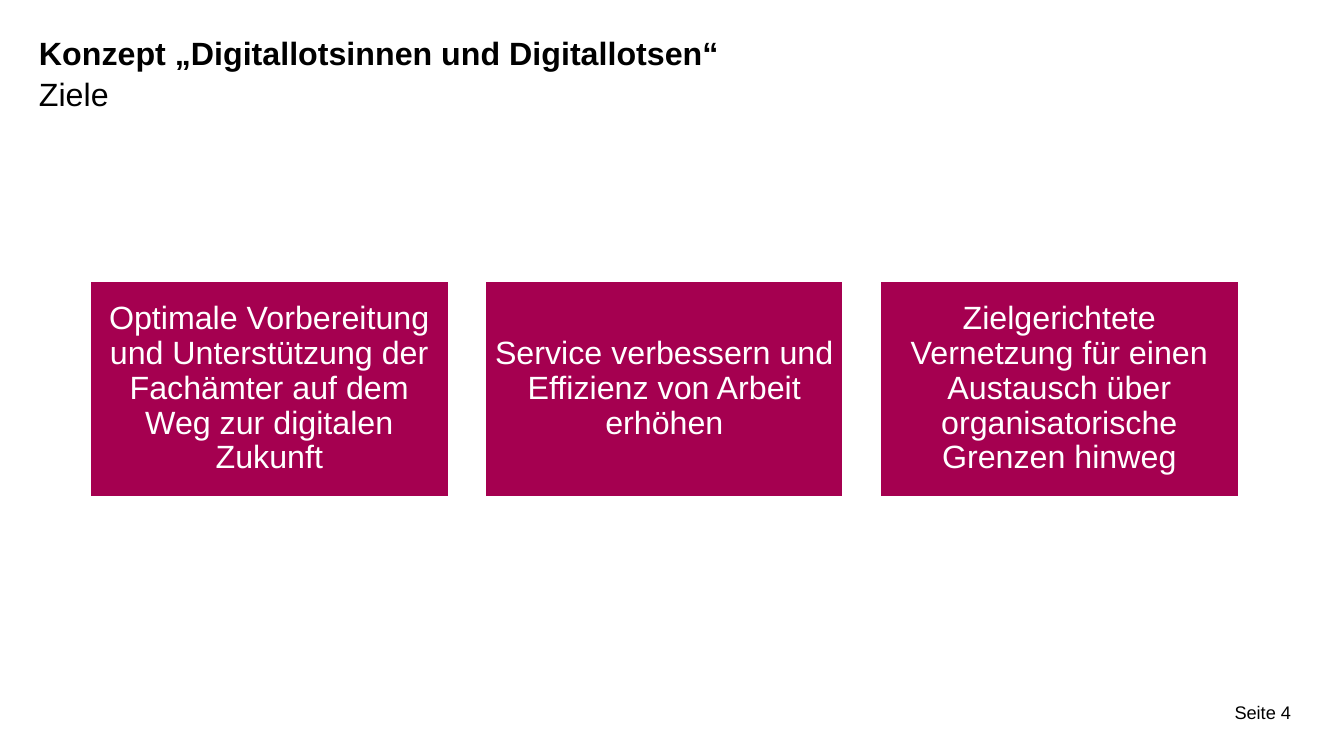
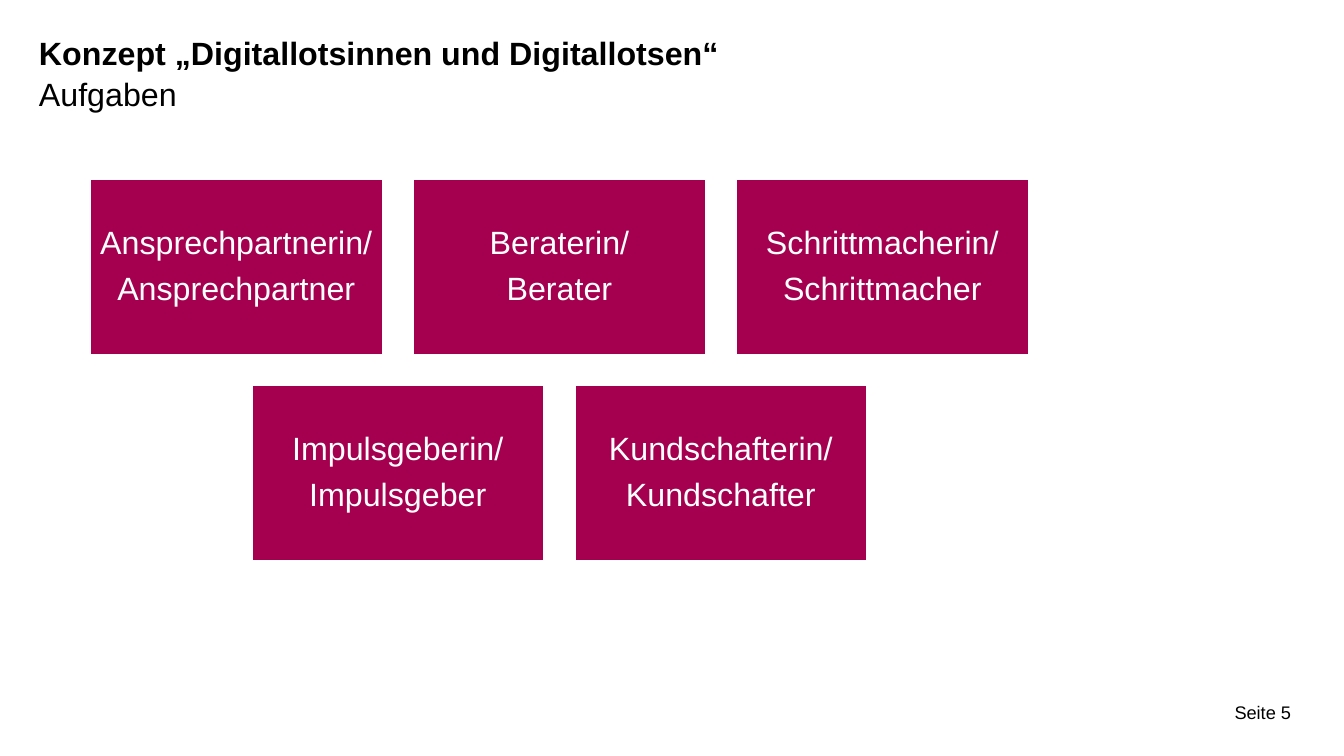
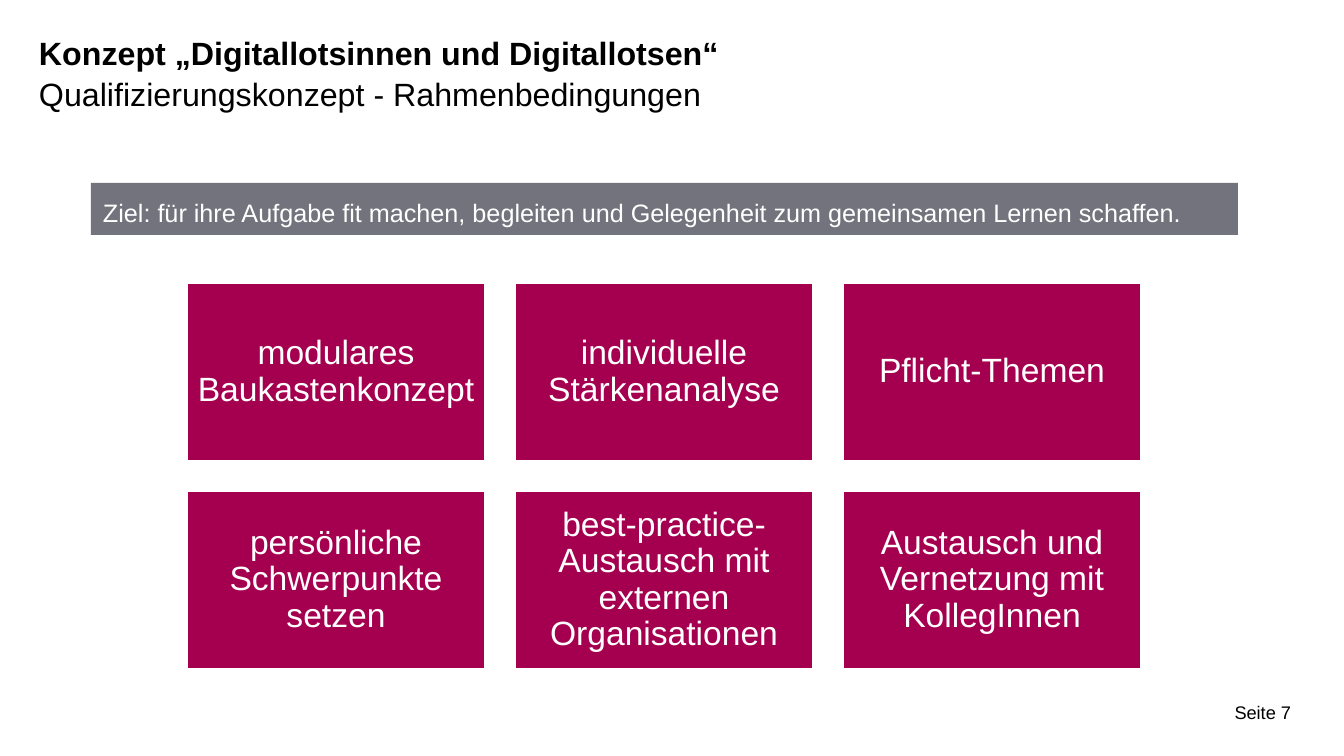
from pptx import Presentation
from pptx.dml.color import RGBColor
from pptx.enum.shapes import MSO_SHAPE
from pptx.enum.text import MSO_ANCHOR, PP_ALIGN
from pptx.util import Pt

PX = 914400 / 100.8
BLACK = RGBColor(0x00, 0x00, 0x00)
WHITE = RGBColor(0xFF, 0xFF, 0xFF)
WINE = RGBColor(0xA5, 0x00, 0x50)
GREY = RGBColor(0x73, 0x73, 0x7D)
FONT = "Arial"
TITLE = "Konzept „Digitallotsinnen und Digitallotsen“"


def write(slide, text, area, size, color=BLACK, fill=None, edge=None, head=False,
          align=PP_ALIGN.LEFT, anchor=MSO_ANCHOR.TOP, pad=(0, 0), lead=1.0, after=0):
    """Add text at area (px); fill makes it a rectangle, head sets line one bold."""
    spot = [round(n * PX) for n in area]
    if fill is None:
        box = slide.shapes.add_textbox(*spot)
    else:
        box = slide.shapes.add_shape(MSO_SHAPE.RECTANGLE, *spot)
        box.shadow.inherit = False
        box.fill.solid()
        box.fill.fore_color.rgb = fill
        if edge is None:
            box.line.fill.background()
        else:
            box.line.color.rgb = edge
            box.line.width = Pt(2)
    frame = box.text_frame
    frame.word_wrap = True
    frame.vertical_anchor = anchor
    frame.margin_left = frame.margin_right = round(pad[0] * PX)
    frame.margin_top = frame.margin_bottom = round(pad[1] * PX)
    frame.text = text
    for i, para in enumerate(frame.paragraphs):
        para.alignment = align
        para.line_spacing = lead
        para.space_after = Pt(after)
        font = para.font
        font.name = FONT
        font.size = Pt(size)
        font.color.rgb = color
        font.bold = head and i == 0


# Each grid: left, top, box width, box height, gap
PAGES = [
    (4, "Ziele", 23, (90, 281, 359, 216, 36), [
        ["Optimale Vorbereitung und Unterstützung der Fachämter auf dem Weg "
         "zur digitalen Zukunft",
         "Service verbessern und Effizienz von Arbeit erhöhen",
         "Zielgerichtete Vernetzung für einen Austausch über organisatorische "
         "Grenzen hinweg"],
    ]),
    (5, "Aufgaben", 23, (90, 179, 293, 176, 30), [
        ["Ansprechpartnerin/\nAnsprechpartner", "Beraterin/\nBerater",
         "Schrittmacherin/\nSchrittmacher"],
        ["Impulsgeberin/\nImpulsgeber", "Kundschafterin/\nKundschafter"],
    ]),
    (7, "Qualifizierungskonzept - Rahmenbedingungen", 24, (187, 283, 298, 178, 30), [
        ["modulares Baukastenkonzept", "individuelle Stärkenanalyse", "Pflicht-Themen"],
        ["persönliche Schwerpunkte setzen",
         "best-practice-Austausch mit externen Organisationen",
         "Austausch und Vernetzung mit KollegInnen"],
    ]),
]

deck = Presentation()
deck.slide_width = round(1344 * PX)
deck.slide_height = round(756 * PX)

for page, topic, size, (left, top, wide, high, gap), rows in PAGES:
    slide = deck.slides.add_slide(deck.slide_layouts[6])
    write(slide, f"{TITLE}\n{topic}", (39, 31, 1252, 84), 23, head=True, lead=1.06)
    write(slide, f"Seite {page}", (1164, 700, 127, 24), 13,
          align=PP_ALIGN.RIGHT, anchor=MSO_ANCHOR.MIDDLE)
    for r, row in enumerate(rows):
        # Shorter rows are centred under the first
        shift = (len(rows[0]) - len(row)) * (wide + gap) / 2
        for c, text in enumerate(row):
            area = (left + shift + c * (wide + gap), top + r * (high + gap), wide, high)
            write(slide, text, area, size, color=WHITE, fill=WINE, edge=WHITE,
                  align=PP_ALIGN.CENTER, anchor=MSO_ANCHOR.MIDDLE,
                  pad=(9, 9), lead=0.9, after=8)

# The last slide also states the aim
write(slide, "Ziel: für ihre Aufgabe fit machen, begleiten und Gelegenheit zum "
      "gemeinsamen Lernen schaffen.", (91, 183, 1147, 52), 18,
      color=WHITE, fill=GREY, pad=(12, 8), lead=1.2)

deck.save("out.pptx")
